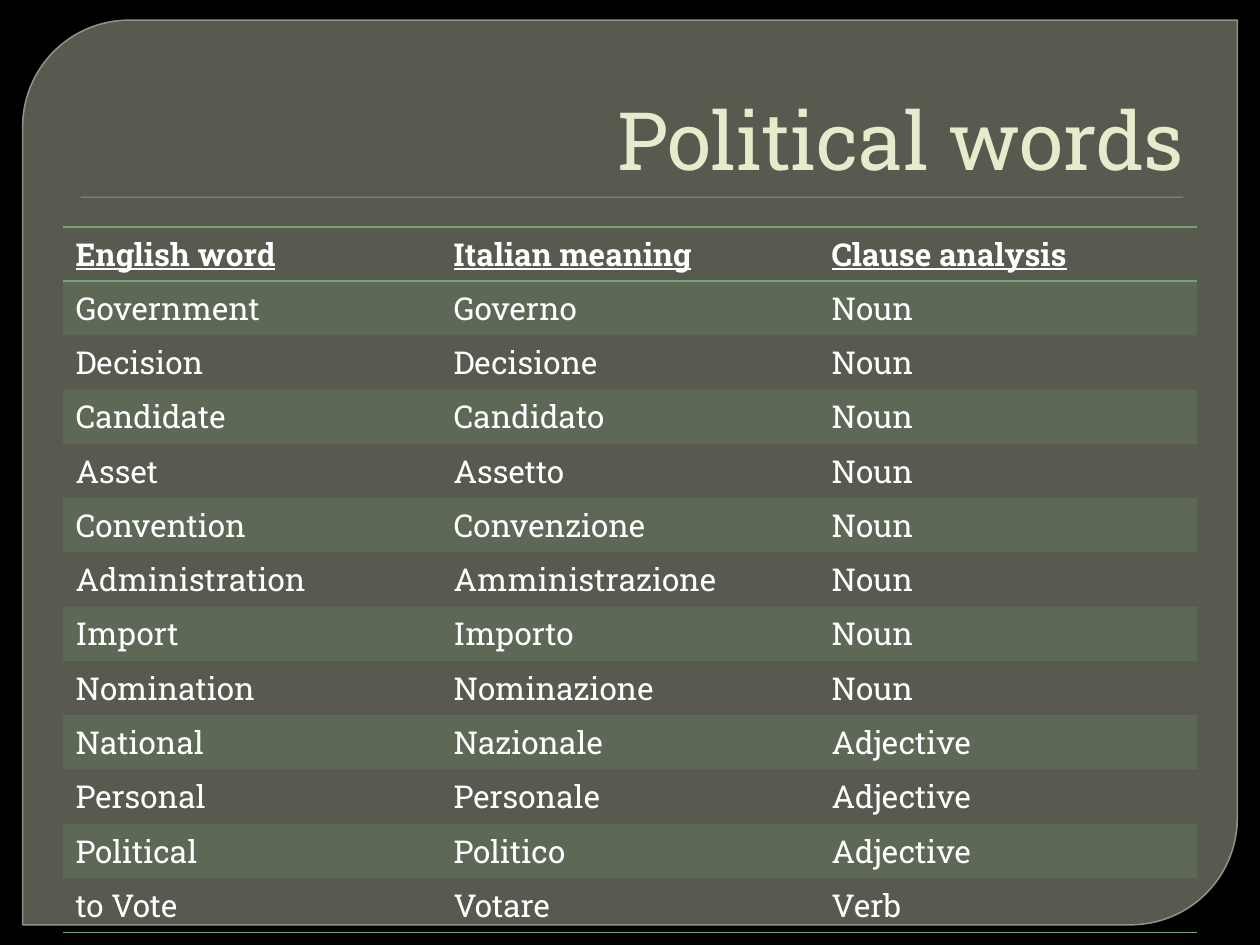
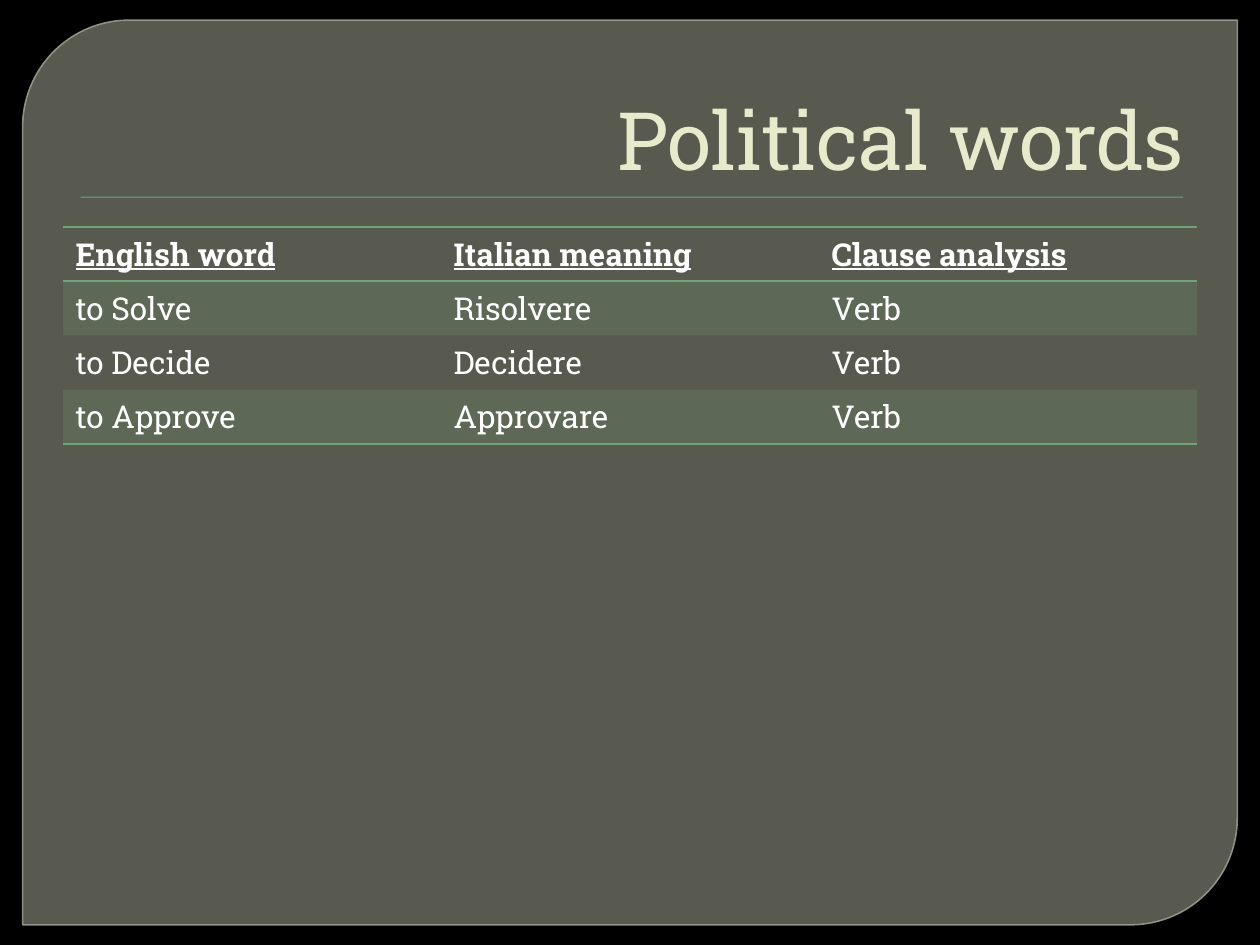
from lxml.etree import SubElement
from pptx import Presentation
from pptx.dml.color import RGBColor as RGB
from pptx.enum.shapes import MSO_SHAPE as SHAPE
from pptx.enum.text import MSO_ANCHOR as ANCHOR, PP_ALIGN as ALIGN
from pptx.oxml.ns import qn
from pptx.util import Inches, Pt

COLORS = {
    "background": "000000",
    "panel": "888B7B",
    "panel_edge": "9DA090",
    "green": "72A376",
    "title": "E7EACB",
    "text": "FFFFFF",
}
FONT = "Roboto Slab"
TITLE_FORMAT = {"name": FONT, "size": Pt(46), "bold": False}
HEADER_FORMAT = {"name": FONT, "size": Pt(18), "bold": True, "underline": True}
WORD_FORMAT = {"name": FONT, "size": Pt(18), "bold": False, "underline": False}

TITLE = "Political words"
HEADINGS = ("English word", "Italian meaning", "Clause analysis")
WORD_LISTS = [
    [
        ("Government", "Governo", "Noun"),
        ("Decision", "Decisione", "Noun"),
        ("Candidate", "Candidato", "Noun"),
        ("Asset", "Assetto", "Noun"),
        ("Convention", "Convenzione", "Noun"),
        ("Administration", "Amministrazione", "Noun"),
        ("Import", "Importo", "Noun"),
        ("Nomination", "Nominazione", "Noun"),
        ("National", "Nazionale", "Adjective"),
        ("Personal", "Personale", "Adjective"),
        ("Political", "Politico", "Adjective"),
        ("to Vote", "Votare", "Verb"),
    ],
    [
        ("to Solve", "Risolvere", "Verb"),
        ("to Decide", "Decidere", "Verb"),
        ("to Approve", "Approvare", "Verb"),
    ],
]
ROW_HEIGHT = 0.41


def paint(fill, color, holder=None, opacity=100):
    fill.solid()
    fill.fore_color.rgb = RGB.from_string(COLORS[color])
    if opacity < 100:
        tint = next(holder.iter(qn("a:srgbClr")))
        SubElement(tint, qn("a:alpha"), val=str(opacity * 1000))


def style(font, values, color):
    for attribute, value in values.items():
        setattr(font, attribute, value)
    font.color.rgb = RGB.from_string(COLORS[color])


deck = Presentation()
deck.slide_width, deck.slide_height = Inches(10), Inches(7.5)

for words in WORD_LISTS:
    slide = deck.slides.add_slide(deck.slide_layouts[5])
    paint(slide.background.fill, "background")

    panel = slide.shapes.add_shape(
        SHAPE.ROUND_2_DIAG_RECTANGLE, Inches(0.18), Inches(0.16), Inches(9.64), Inches(7.18))
    panel.adjustments[0] = 0.118
    panel.adjustments[1] = 0
    panel.shadow.inherit = False
    paint(panel.fill, "panel", panel.element, 65)
    panel.line.width = Pt(0.87)
    edge_fill = panel.line.fill
    paint(edge_fill, "panel_edge", panel.line._ln, 88)

    rule = slide.shapes.add_shape(
        SHAPE.RECTANGLE, Inches(0.64), Inches(1.56), Inches(8.75), Inches(0.01))
    rule.shadow.inherit = False
    paint(rule.fill, "green")
    rule.line.fill.background()

    title = slide.shapes.title
    title.left, title.top, title.width, title.height = map(Inches, (0.5, 0.28, 9, 1.25))
    title.text_frame.text = TITLE
    title.text_frame.vertical_anchor = ANCHOR.BOTTOM
    heading = title.text_frame.paragraphs[0]
    heading.alignment = ALIGN.RIGHT
    style(heading.runs[0].font, TITLE_FORMAT, "title")
    slide.shapes._spTree.append(title.element)

    rows = [HEADINGS, *words]
    glossary = slide.shapes.add_table(
        len(rows), len(HEADINGS), Inches(0.5), Inches(1.8),
        Inches(9), Inches(ROW_HEIGHT * len(rows))).table
    ruled_edges = (0, 1, len(rows))

    for r, row in enumerate(rows):
        glossary.rows[r].height = Inches(ROW_HEIGHT)
        for c, word in enumerate(row):
            cell = glossary.cell(r, c)
            cell.text = word
            style(cell.text_frame.paragraphs[0].runs[0].font,
                  WORD_FORMAT if r else HEADER_FORMAT, "text")
            borders = cell._tc.get_or_add_tcPr()
            for side, ruled in (("L", False), ("R", False),
                                ("T", r in ruled_edges), ("B", r + 1 in ruled_edges)):
                border = SubElement(borders, qn(f"a:ln{side}"), w=str(Pt(1)))
                if ruled:
                    ink = SubElement(border, qn("a:solidFill"))
                    SubElement(ink, qn("a:srgbClr"), val=COLORS["green"])
                else:
                    SubElement(border, qn("a:noFill"))
            if r % 2:
                cell.fill.solid()
                band = borders.find(qn("a:solidFill"))
                paint(cell.fill, "green", band, 20)
            else:
                cell.fill.background()

deck.save("out.pptx")
